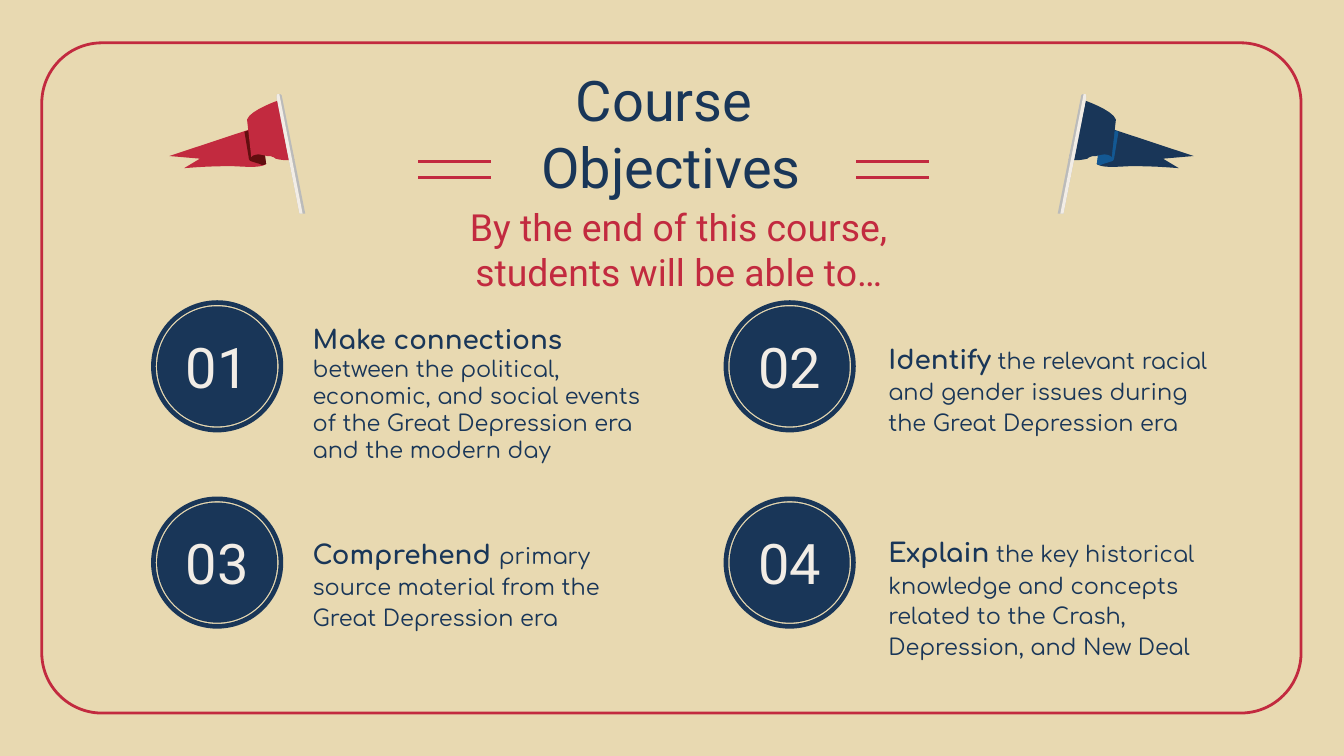
from lxml import etree
from pptx import Presentation
from pptx import util as u
from pptx.dml.color import RGBColor
from pptx.enum import shapes, text
from pptx.oxml.ns import qn

SAND, NAVY, RED, IVORY = "E8D9B1", "193658", "C22A3F", "F2EDE6"
MAROON, BLUE, GREY = "620E0F", "135893", "BBBBBA"

# Flag outlines in cm: pairs are corners, sixes are Bezier curves
PENNANT = [(4.83, 2.41), (5.03, 3.1), (5.03, 3.1, 4.98, 3.18, 4.57, 3.15),
           (4.17, 3.12, 3.48, 3.18, 3.48, 3.18), (3.78, 3), (3.2, 2.95)]
FOLD = [(4.88, 2.41), (5.03, 3.1), (5, 3.12, 4.95, 3.12, 4.95, 3.12),
        (4.93, 3.1, 4.8, 3.07, 4.75, 3.05),
        (4.72, 3.05, 4.7, 3, 4.7, 2.97), (4.62, 2.49)]
CURL = [(5, 2.84), (5.03, 3.1), (5.03, 3.1, 5.03, 3.07, 4.98, 3.07),
        (4.95, 3.05), (4.93, 3.05, 4.9, 3.05, 4.88, 3.05),
        (4.8, 3.02, 4.72, 3, 4.75, 2.95), (4.78, 2.9, 5, 2.84, 5, 2.84)]
CLOTH = [(5.31, 1.88), (5.56, 3.02), (5.56, 3.02, 5.41, 3.05, 5.21, 3),
         (5.18, 2.97, 5.16, 2.97, 5.11, 2.95), (5.05, 2.95),
         (4.8, 2.87, 4.75, 2.97, 4.75, 2.97), (4.67, 2.26),
         (4.72, 2.08, 5.31, 1.88, 5.31, 1.88)]
POLE = [(5.28, 1.78), (5.31, 1.78, 5.33, 1.8, 5.33, 1.83), (5.77, 4.04),
        (5.66, 4.04), (5.23, 1.85), (5.23, 1.8, 5.23, 1.78, 5.26, 1.78)]
POLE_LIGHT = [(5.28, 1.78), (5.72, 4.04), (5.66, 4.04), (5.23, 1.85),
              (5.23, 1.8, 5.23, 1.78, 5.26, 1.78)]
MIRROR = 25.76  # sum of the x values of two mirrored points

# Number, column, row, text top, line spacing, (text, size, bold) runs
OBJECTIVES = [
    ("01", 0, 0, 5.87, None, [
        ("Make connections", 14, True),
        (" between the political, economic, and social events of the Great "
         "Depression era and the modern day", 12, False)]),
    ("02", 1, 0, 6.15, 1.15, [
        ("Identify", 14, True),
        (" the relevant racial and gender issues during the Great "
         "Depression era", 12, False)]),
    ("03", 0, 1, 9.83, 1.15, [
        ("Comprehend ", 14, True),
        ("primary source material from the Great Depression era",
         12, False)]),
    ("04", 1, 1, 9.8, 1.15, [
        ("Explain", 14, True),
        (" the key historical knowledge and concepts related to the Crash, "
         "Depression, and New Deal", 12, False)]),
]


def rgb(value):
    return RGBColor.from_string(value)


def paint(shape, fill=None, line=None, weight=1.5):
    shape.shadow.inherit = False
    if fill:
        shape.fill.solid()
        shape.fill.fore_color.rgb = rgb(fill)
    else:
        shape.fill.background()
    if line:
        shape.line.color.rgb = rgb(line)
        shape.line.width = u.Pt(weight)
    else:
        shape.line.fill.background()


def add_preset(slide, kind, left, top, width, height, **style):
    shape = slide.shapes.add_shape(
        kind, u.Cm(left), u.Cm(top), u.Cm(width), u.Cm(height))
    paint(shape, **style)
    return shape


def add_frame(slide, left, top, width, height):
    box = slide.shapes.add_textbox(
        u.Cm(left), u.Cm(top), u.Cm(width), u.Cm(height))
    frame = box.text_frame
    frame.word_wrap = True
    frame.margin_left = frame.margin_right = u.Cm(0.25)
    frame.margin_top = frame.margin_bottom = u.Cm(0.25)
    return frame


def add_heading(slide, place, lines, size, colour, anchor):
    frame = add_frame(slide, *place)
    frame.vertical_anchor = anchor
    frame.text = lines
    for paragraph in frame.paragraphs:
        paragraph.alignment = text.PP_ALIGN.CENTER
        paragraph.font.name = "Roboto"
        paragraph.font.size = u.Pt(size)
        paragraph.font.color.rgb = rgb(colour)


def add_rule(slide, left, top, length):
    rule = slide.shapes.add_connector(
        shapes.MSO_CONNECTOR.STRAIGHT,
        u.Cm(left), u.Cm(top), u.Cm(left + length), u.Cm(top))
    rule.line.color.rgb = rgb(RED)
    rule.line.width = u.Pt(1.5)
    etree.SubElement(rule._element.spPr, qn("a:effectLst"))


def trace(outline, steps=8):
    """Turn corners and curves into a list of points."""
    points = [outline[0]]
    for part in outline[1:]:
        if len(part) == 2:
            points.append(part)
            continue
        controls = [points[-1], part[:2], part[2:4], part[4:]]
        for step in range(1, steps + 1):
            t = step / steps
            weights = ((1 - t) ** 3, 3 * t * (1 - t) ** 2,
                       3 * t * t * (1 - t), t ** 3)
            points.append(tuple(
                sum(w * c[axis] for w, c in zip(weights, controls))
                for axis in (0, 1)))
    return points


def add_flag(slide, cloth, shade, mirrored=False):
    parts = [(PENNANT, cloth), (FOLD, shade), (CURL, shade),
             (CLOTH, cloth), (POLE, GREY), (POLE_LIGHT, IVORY)]
    for outline, colour in parts:
        points = [(u.Cm(MIRROR - x if mirrored else x), u.Cm(y))
                  for x, y in trace(outline)]
        builder = slide.shapes.build_freeform(*points[0])
        builder.add_line_segments(points[1:], close=True)
        paint(builder.convert_to_shape(), fill=colour)


def add_objective(slide, number, column, row, text_top, spacing, runs):
    # Numbered medallion
    left, top = 2.9 + 10.82 * column, 5.72 + 3.71 * row
    oval = shapes.MSO_SHAPE.OVAL
    add_preset(slide, oval, left, top, 2.41, 2.41, line=NAVY, weight=2.5)
    add_preset(slide, oval, left + 0.07, top + 0.07, 2.27, 2.27, fill=NAVY)
    add_heading(slide, (left, top + 0.4, 2.41, 1.6), number, 30, IVORY,
                text.MSO_ANCHOR.MIDDLE)
    # Description
    frame = add_frame(slide, 5.66 + 10.88 * column, text_top, 6.86, 1.65)
    paragraph = frame.paragraphs[0]
    paragraph.line_spacing = spacing
    paragraph.font.name = "Comfortaa"
    paragraph.font.color.rgb = rgb(NAVY)
    for words, size, bold in runs:
        run = paragraph.add_run()
        run.text = words
        run.font.size = u.Pt(size)
        run.font.bold = bold


def main():
    deck = Presentation()
    deck.slide_width, deck.slide_height = u.Cm(25.4), u.Cm(14.29)
    slide = deck.slides.add_slide(deck.slide_layouts[6])

    # Background and border
    slide.background.fill.solid()
    slide.background.fill.fore_color.rgb = rgb(SAND)
    border = add_preset(slide, shapes.MSO_SHAPE.ROUNDED_RECTANGLE,
                        0.79, 0.81, 23.8, 12.67, line=RED)
    border.adjustments[0] = 0.09

    # Objectives
    for objective in OBJECTIVES:
        add_objective(slide, *objective)

    # Headings
    add_heading(slide, (7.9, 3.91, 9.86, 1.6),
                "By the end of this course, students will be able to…",
                20, RED, text.MSO_ANCHOR.MIDDLE)
    add_heading(slide, (7.62, 0.99, 10.13, 2.69), "Course \nObjectives",
                30, NAVY, text.MSO_ANCHOR.TOP)

    # Double rules beside the title
    for left in (7.9, 16.18):
        for top in (3.05, 3.35):
            add_rule(slide, left, top, 1.37)

    # Flags
    add_flag(slide, RED, MAROON)
    add_flag(slide, NAVY, BLUE, mirrored=True)

    deck.save("out.pptx")


if __name__ == "__main__":
    main()
